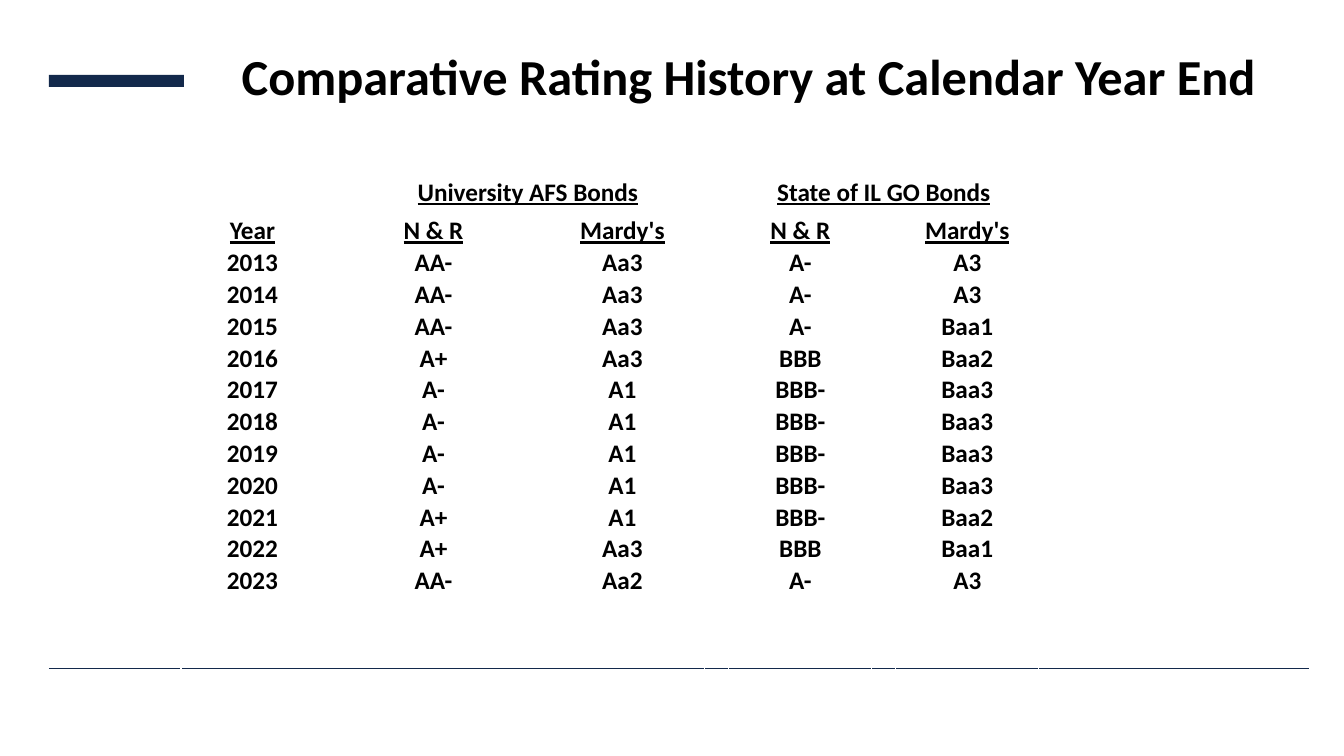
from lxml.etree import SubElement
from pptx import Presentation
from pptx.dml.color import RGBColor
from pptx.enum.shapes import MSO_CONNECTOR, MSO_SHAPE
from pptx.enum.text import MSO_ANCHOR, PP_ALIGN
from pptx.oxml.ns import qn
from pptx.util import Pt

PX = 914400 / 100.8
NAVY = "13294B"
BLACK = "000000"
COLUMNS = [143, 27, 165, 24, 165, 24, 143, 24, 143]
GROUPS = {2: "University AFS Bonds", 6: "State of IL GO Bonds"}
HEADINGS = ["Year", "N & R", "Mardy's", "N & R", "Mardy's"]
RATINGS = [
    ["2013", "AA-", "Aa3", "A-", "A3"],
    ["2014", "AA-", "Aa3", "A-", "A3"],
    ["2015", "AA-", "Aa3", "A-", "Baa1"],
    ["2016", "A+", "Aa3", "BBB", "Baa2"],
    ["2017", "A-", "A1", "BBB-", "Baa3"],
    ["2018", "A-", "A1", "BBB-", "Baa3"],
    ["2019", "A-", "A1", "BBB-", "Baa3"],
    ["2020", "A-", "A1", "BBB-", "Baa3"],
    ["2021", "A+", "A1", "BBB-", "Baa2"],
    ["2022", "A+", "Aa3", "BBB", "Baa1"],
    ["2023", "AA-", "Aa2", "A-", "A3"],
]
ROWS = [44, 45] + [31] * (len(RATINGS) + 1) + [43, 43]


def px(n):
    """Turn pixels into EMU."""
    return round(n * PX)


def color(value):
    """Turn a hex string into a colour."""
    return RGBColor.from_string(value)


def format_text(tf, size, underline=False):
    """Centre the text and set its bold black type."""
    p = tf.paragraphs[0]
    p.alignment = PP_ALIGN.CENTER
    for r in p.runs:
        r.font.name = "Calibri"
        r.font.size = Pt(size)
        r.font.bold = True
        r.font.underline = underline
        r.font.color.rgb = color(BLACK)


def set_margins(cell, side, top, bottom):
    """Set the inner margins of a table cell."""
    cell.margin_left = cell.margin_right = px(side)
    cell.margin_top = px(top)
    cell.margin_bottom = px(bottom)


def add_header(s, x, y, w, h):
    """Place the accent bar and the title in the header box."""
    bar = s.shapes.add_shape(MSO_SHAPE.RECTANGLE, px(x), px(y + 36), px(135), px(12))
    bar.shadow.inherit = False
    bar.fill.solid()
    bar.fill.fore_color.rgb = color(NAVY)
    bar.line.fill.background()
    title = s.shapes.title
    title.left, title.top = px(x + 162), px(y)
    title.width, title.height = px(w - 162), px(h)
    tf = title.text_frame
    tf.text = "Comparative Rating History at Calendar Year End"
    tf.word_wrap = True
    tf.vertical_anchor = MSO_ANCHOR.MIDDLE
    format_text(tf, 36)


def add_ratings(s, x, y):
    """Place the table of ratings with its top left corner at x, y."""
    frame = s.shapes.add_table(len(ROWS), len(COLUMNS), px(x), px(y),
                               px(sum(COLUMNS)), px(sum(ROWS)))
    table = frame.table
    table.first_row = table.horz_banding = False
    for column, width in zip(table.columns, COLUMNS):
        column.width = px(width)
    for row, height in zip(table.rows, ROWS):
        row.height = px(height)
    for cell in table.iter_cells():
        cell.fill.background()
        cell.vertical_anchor = MSO_ANCHOR.BOTTOM
        set_margins(cell, 1, 1, 0)
    last = len(ROWS) - 1
    for row, start, end in [(0, 0, 8), (1, 2, 4), (1, 6, 8),
                            (last - 1, 0, 4), (last, 0, 4)]:
        table.cell(row, start).merge(table.cell(row, end))
    for column, name in GROUPS.items():
        cell = table.cell(1, column)
        set_margins(cell, 13, 7, 7)
        cell.text_frame.text = name
        format_text(cell.text_frame, 18, underline=True)
    for i, values in enumerate([HEADINGS] + RATINGS):
        for j, value in enumerate(values):
            tf = table.cell(i + 2, j * 2).text_frame
            tf.text = value
            format_text(tf, 18, underline=i == 0)


def add_footer_line(s, x, y, w):
    """Draw the thin rule above the footer."""
    line = s.shapes.add_connector(MSO_CONNECTOR.STRAIGHT, px(x), px(y), px(x + w), px(y))
    line.line.color.rgb = color(NAVY)
    line.line.width = Pt(0.5)
    SubElement(line._element.spPr, qn("a:effectLst"))


def main():
    """Build and save the slide."""
    prs = Presentation()
    prs.slide_width, prs.slide_height = px(1344), px(756)
    s = prs.slides.add_slide(prs.slide_layouts[5])
    add_header(s, 49, 39, 1238, 72)
    add_footer_line(s, 49, 668, 1260)
    add_ratings(s, 181, 126)
    prs.save("out.pptx")


if __name__ == "__main__":
    main()
